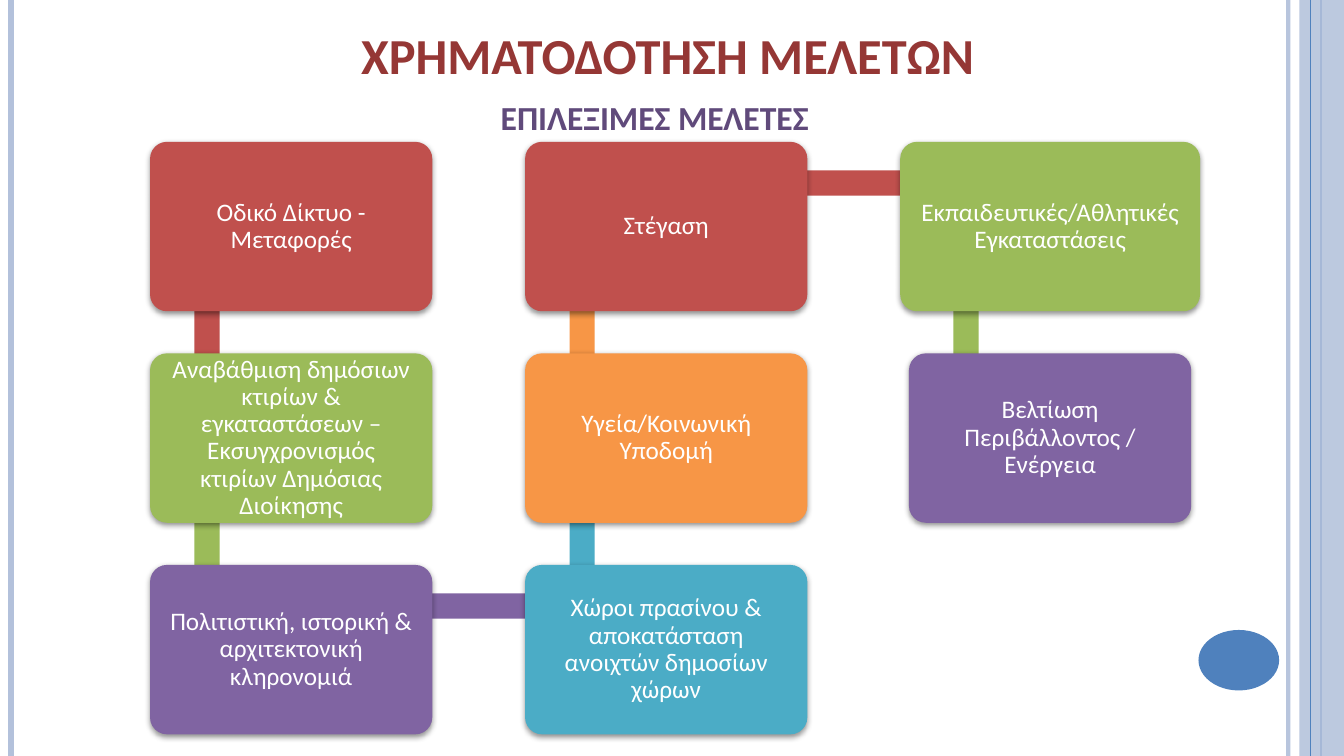
"""Build the slide on eligible studies as a snaking chain of boxes."""
from dataclasses import dataclass

import lxml.etree
import pptx
import pptx.dml.color
import pptx.enum.shapes
import pptx.enum.text
import pptx.oxml
import pptx.oxml.ns
import pptx.util

Pt = pptx.util.Pt
RGBColor = pptx.dml.color.RGBColor
Preset = pptx.enum.shapes.MSO_SHAPE
Anchor = pptx.enum.text.MSO_ANCHOR

WHITE = RGBColor(0xFF, 0xFF, 0xFF)
RED = RGBColor(0xC0, 0x50, 0x4D)
GREEN = RGBColor(0x9B, 0xBB, 0x59)
PURPLE = RGBColor(0x80, 0x64, 0xA2)
AQUA = RGBColor(0x4B, 0xAC, 0xC6)
ORANGE = RGBColor(0xF7, 0x96, 0x46)
BLUE = RGBColor(0x4F, 0x81, 0xBD)
PALE_BLUE = RGBColor(0xB3, 0xC1, 0xDB)
DARK_RED = RGBColor(0x95, 0x37, 0x35)
DARK_PURPLE = RGBColor(0x60, 0x4A, 0x7B)

FONT = "Calibri"
SLIDE_WIDTH, SLIDE_HEIGHT = 960, 540
LEFT, TOP = 107.2, 101.3
COLUMN_STEP, ROW_STEP = 267.9, 151.1
BOX_WIDTH, BOX_HEIGHT = 201.6, 121
BAR_THICKNESS = 18
SHADOW = (
    '<a:effectLst xmlns:a="http://schemas.openxmlformats.org/drawingml/2006/main">'
    '<a:outerShdw blurRad="50800" dist="20320" dir="5400000" rotWithShape="0">'
    '<a:srgbClr val="000000"><a:alpha val="42000"/></a:srgbClr>'
    "</a:outerShdw></a:effectLst>"
)


@dataclass(frozen=True)
class Frame:
    left: float
    top: float
    width: float
    height: float

    def lengths(self) -> tuple:
        return Pt(self.left), Pt(self.top), Pt(self.width), Pt(self.height)


@dataclass(frozen=True)
class Rule:
    x: float
    color: RGBColor
    weight: float
    opacity: int = 100


@dataclass(frozen=True)
class Study:
    text: str
    column: int
    row: int
    color: RGBColor
    indent: float = 0
    width: float = BOX_WIDTH

    def frame(self) -> Frame:
        left = LEFT + self.column * COLUMN_STEP + self.indent
        return Frame(left, TOP + self.row * ROW_STEP, self.width, BOX_HEIGHT)


@dataclass(frozen=True)
class Heading:
    text: str
    frame: Frame
    size: float
    color: RGBColor
    anchor: Anchor


RULES = (
    Rule(920.2, PALE_BLUE, 3, 93),
    Rule(7.9, PALE_BLUE, 4.5),
    Rule(943.9, BLUE, 1.5),
)
BAND = Frame(928.1, 0, 31.9, SLIDE_HEIGHT)
BAND_RULE = Rule(936, BLUE, 0.75)
OVAL = Frame(856.1, 450, 57.6, 43.2)

STUDIES = (
    Study("Οδικό Δίκτυο - Μεταφορές", 0, 0, RED),
    Study("Αναβάθμιση δημόσιων κτιρίων & εγκαταστάσεων – "
          "Εκσυγχρονισμός κτιρίων Δημόσιας Διοίκησης", 0, 1, GREEN),
    Study("Πολιτιστική, ιστορική & αρχιτεκτονική κληρονομιά", 0, 2, PURPLE),
    Study("Χώροι πρασίνου & αποκατάσταση ανοιχτών δημοσίων χώρων", 1, 2, AQUA),
    Study("Υγεία/Κοινωνική Υποδομή", 1, 1, ORANGE),
    Study("Στέγαση", 1, 0, RED),
    Study("Εκπαιδευτικές/Αθλητικές Εγκαταστάσεις", 2, 0, GREEN, width=214.2),
    Study("Βελτίωση Περιβάλλοντος / Ενέργεια", 2, 1, PURPLE, indent=6.3),
)

HEADINGS = (
    Heading("ΧΡΗΜΑΤΟΔΟΤΗΣΗ ΜΕΛΕΤΩΝ", Frame(85, 0, 784, 64), 36, DARK_RED, Anchor.BOTTOM),
    Heading("ΕΠΙΛΕΞΙΜΕΣ ΜΕΛΕΤΕΣ", Frame(330.5, 65.5, 274.3, 36), 24, DARK_PURPLE, Anchor.TOP),
)


def set_opacity(properties, percent: int) -> None:
    color = properties.find(".//" + pptx.oxml.ns.qn("a:srgbClr"))
    alpha = lxml.etree.SubElement(color, pptx.oxml.ns.qn("a:alpha"))
    alpha.set("val", str(percent * 1000))


def add_rule(slide, rule: Rule) -> None:
    connector = slide.shapes.add_connector(
        pptx.enum.shapes.MSO_CONNECTOR.STRAIGHT, Pt(rule.x), 0, Pt(rule.x), Pt(SLIDE_HEIGHT))
    connector.line.color.rgb = rule.color
    connector.line.width = Pt(rule.weight)
    properties = connector._element.spPr
    if rule.opacity < 100:
        set_opacity(properties, rule.opacity)
    lxml.etree.SubElement(properties, pptx.oxml.ns.qn("a:effectLst"))


def add_filled(slide, preset: Preset, frame: Frame, color: RGBColor):
    shape = slide.shapes.add_shape(preset, *frame.lengths())
    shape.shadow.inherit = False
    shape.fill.solid()
    shape.fill.fore_color.rgb = color
    shape.line.fill.background()
    return shape


def write_text(shape, text: str, size: float, color: RGBColor, bold: bool, anchor: Anchor):
    frame = shape.text_frame
    frame.word_wrap = True
    frame.vertical_anchor = anchor
    frame.text = text
    paragraph = frame.paragraphs[0]
    paragraph.alignment = pptx.enum.text.PP_ALIGN.CENTER
    font = paragraph.runs[0].font
    font.name = FONT
    font.size = Pt(size)
    font.bold = bold
    font.color.rgb = color
    return paragraph


def add_bar(slide, start: Study, end: Study) -> None:
    if start.column == end.column:
        left = max(start.frame().left, end.frame().left) + 31.7
        top = min(start.frame().top, end.frame().top) + 30
        frame = Frame(left, top, BAR_THICKNESS, ROW_STEP)
    else:
        frame = Frame(start.frame().left + 40.5, start.frame().top + 20.4,
                      COLUMN_STEP + (end.width - start.width) / 2, BAR_THICKNESS)
    add_filled(slide, Preset.RECTANGLE, frame, start.color)


def add_study(slide, study: Study) -> None:
    shape = add_filled(slide, Preset.ROUNDED_RECTANGLE, study.frame(), study.color)
    shape.adjustments[0] = 0.1
    properties = shape._element.spPr
    properties.remove(properties.find(pptx.oxml.ns.qn("a:effectLst")))
    properties.append(pptx.oxml.parse_xml(SHADOW))
    paragraph = write_text(shape, study.text, 18, WHITE, False, Anchor.MIDDLE)
    paragraph.line_spacing = 0.9
    frame = shape.text_frame
    frame.margin_left = frame.margin_right = Pt(8.5)
    frame.margin_top = frame.margin_bottom = Pt(8.5)


def add_heading(slide, heading: Heading) -> None:
    shape = slide.shapes.add_textbox(*heading.frame.lengths())
    write_text(shape, heading.text, heading.size, heading.color, True, heading.anchor)


def main() -> None:
    presentation = pptx.Presentation()
    presentation.slide_width = Pt(SLIDE_WIDTH)
    presentation.slide_height = Pt(SLIDE_HEIGHT)
    slide = presentation.slides.add_slide(presentation.slide_layouts[6])
    for rule in RULES:
        add_rule(slide, rule)
    band = add_filled(slide, Preset.RECTANGLE, BAND, PALE_BLUE)
    set_opacity(band._element.spPr, 87)
    add_rule(slide, BAND_RULE)
    add_filled(slide, Preset.OVAL, OVAL, BLUE)
    for start, end in zip(STUDIES, STUDIES[1:]):
        add_bar(slide, start, end)
    for study in STUDIES:
        add_study(slide, study)
    for heading in HEADINGS:
        add_heading(slide, heading)
    presentation.save("out.pptx")


if __name__ == "__main__":
    main()
